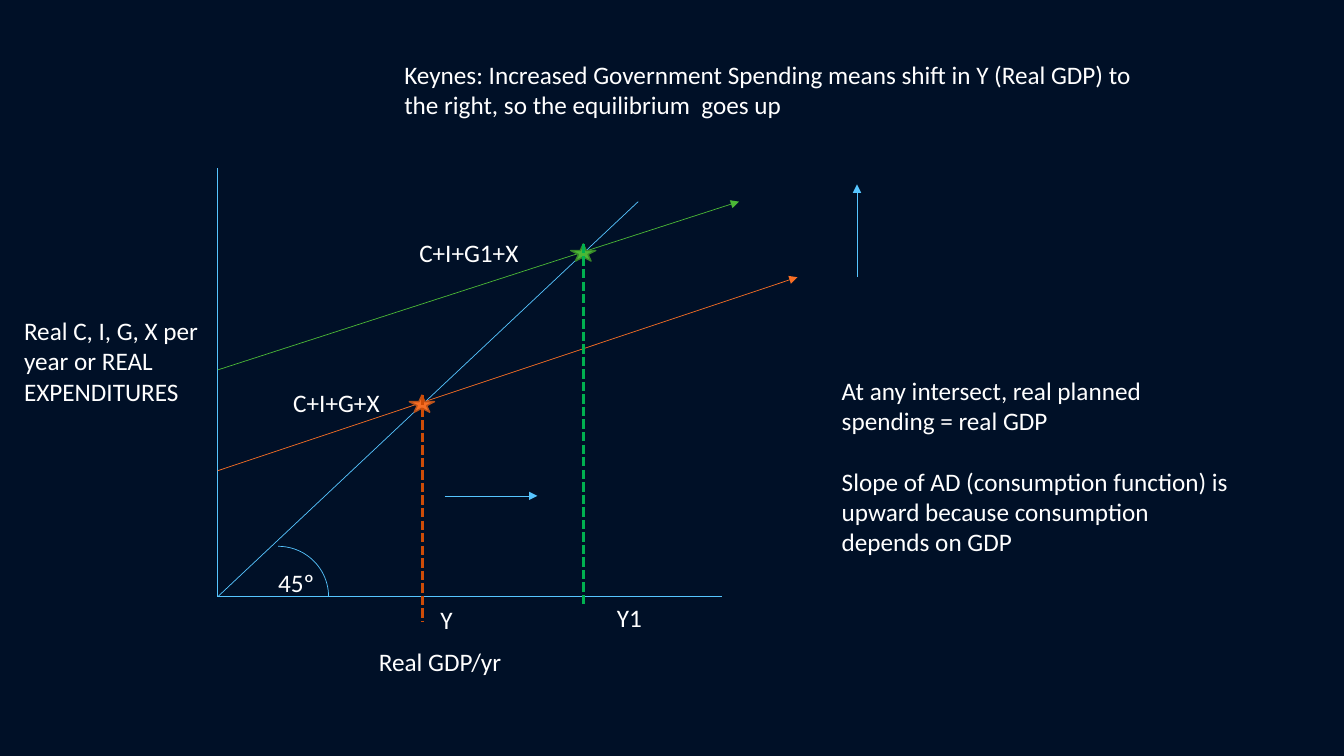
from dataclasses import dataclass

from lxml.etree import SubElement
from pptx import Presentation
from pptx.dml.color import RGBColor
from pptx.enum.dml import MSO_LINE
from pptx.enum.shapes import MSO_CONNECTOR, MSO_SHAPE
from pptx.enum.text import MSO_ANCHOR, MSO_AUTO_SIZE, PP_ALIGN
from pptx.oxml.ns import qn
from pptx.slide import Slide
from pptx.text.text import TextFrame
from pptx.util import Inches, Pt

COLORS = {
    "background": "001027",
    "text": "FFFFFF",
    "axis": "56C5FF",
    "before": "F86E24",
    "before_edge": "B7511B",
    "before_drop": "CE4C07",
    "after": "4BB836",
    "after_edge": "378828",
    "after_drop": "00B050",
}
FONT = "Calibri"
FONT_SIZE = 18
ORIGIN_X, ORIGIN_Y = 2.16, 5.92
STAR_WIDTH, STAR_HEIGHT = 0.25, 0.17


@dataclass
class Line:
    start: tuple[float, float]
    end: tuple[float, float]
    color: str = "axis"
    width: float = 0.5
    arrow: bool = False
    dashed: bool = False


@dataclass
class Star:
    left: float
    top: float
    color: str
    edge: str


@dataclass
class Label:
    left: float
    top: float
    width: float
    height: float
    paragraphs: tuple[str, ...]


CURVES = [
    Line((ORIGIN_X, 1.67), (ORIGIN_X, ORIGIN_Y)),
    Line((ORIGIN_X, ORIGIN_Y), (7.16, ORIGIN_Y)),
    Line((ORIGIN_X, ORIGIN_Y), (6.33, 2)),
    Line((ORIGIN_X, 4.67), (7.91, 2.75), "before", arrow=True),
    Line((ORIGIN_X, 3.67), (7.33, 2), "after", arrow=True),
]
EQUILIBRIA = [
    Star(5.66, 2.42, "after", "after_edge"),
    Star(4.06, 3.92, "before", "before_edge"),
]
DROPS_AND_SHIFTS = [
    Line((4.19, 3.92), (4.19, 6.17), "before_drop", 2.25, dashed=True),
    Line((5.79, 2.42), (5.79, 6), "after_drop", 2.25, dashed=True),
    Line((8.5, 2.75), (8.5, 1.83), arrow=True),
    Line((4.41, 4.92), (5.33, 4.92), arrow=True),
]
TITLE = Label(3.91, 0.54, 7.67, 0.71, (
    "Keynes: Increased Government Spending means shift in Y (Real GDP) "
    "to the right, so the equilibrium  goes up",
))
LABELS = [
    Label(2.66, 5.58, 0.83, 0.4, ("45º",)),
    Label(4.06, 2.31, 1.42, 0.4, ("C+I+G1+X",)),
    Label(2.81, 3.79, 1.25, 0.4, ("C+I+G+X",)),
    Label(4.27, 5.95, 0.35, 0.4, ("Y",)),
    Label(6.02, 5.93, 0.58, 0.4, ("Y1",)),
    Label(0.14, 3.08, 1.93, 1.01,
          ("Real C, I, G, X per year or REAL EXPENDITURES",)),
    Label(3.66, 6.36, 2.35, 0.4, ("Real GDP/yr",)),
    Label(8.25, 3.67, 4.08, 1.92, (
        "At any intersect, real planned spending = real GDP",
        "Slope of AD (consumption function) is upward because "
        "consumption depends on GDP",
    )),
]


def rgb(name: str) -> RGBColor:
    return RGBColor.from_string(COLORS[name])


def draw_line(slide: Slide, line: Line) -> None:
    points = [Inches(value) for value in (*line.start, *line.end)]
    connector = slide.shapes.add_connector(MSO_CONNECTOR.STRAIGHT, *points)
    connector.line.color.rgb = rgb(line.color)
    connector.line.width = Pt(line.width)
    if line.dashed:
        connector.line.dash_style = MSO_LINE.SQUARE_DOT
    properties = connector._element.spPr
    if line.arrow:
        SubElement(properties.find(qn("a:ln")), qn("a:tailEnd"), type="triangle")
    SubElement(properties, qn("a:effectLst"))


def draw_star(slide: Slide, star: Star) -> None:
    shape = slide.shapes.add_shape(
        MSO_SHAPE.STAR_5_POINT, Inches(star.left), Inches(star.top),
        Inches(STAR_WIDTH), Inches(STAR_HEIGHT))
    shape.shadow.inherit = False
    shape.fill.solid()
    shape.fill.fore_color.rgb = rgb(star.color)
    shape.line.color.rgb = rgb(star.edge)
    shape.line.width = Pt(1)


def draw_angle_arc(slide: Slide) -> None:
    arc = slide.shapes.add_shape(
        MSO_SHAPE.ARC, Inches(2.26), Inches(5.42), Inches(1), Inches(1))
    arc.shadow.inherit = False
    arc.fill.background()
    arc.line.color.rgb = rgb("axis")
    arc.line.width = Pt(0.5)


def write_text(text_frame: TextFrame, paragraphs: tuple[str, ...]) -> None:
    text_frame.text = "\n".join(paragraphs)
    text_frame.word_wrap = True
    text_frame.auto_size = MSO_AUTO_SIZE.SHAPE_TO_FIT_TEXT
    text_frame.vertical_anchor = MSO_ANCHOR.TOP
    for index, paragraph in enumerate(text_frame.paragraphs):
        paragraph.alignment = PP_ALIGN.LEFT
        if index:
            paragraph.space_before = Pt(22)
        paragraph.font.name = FONT
        paragraph.font.size = Pt(FONT_SIZE)
        paragraph.font.color.rgb = rgb("text")


def draw_title(slide: Slide) -> None:
    title = slide.shapes.title
    title.left, title.top = Inches(TITLE.left), Inches(TITLE.top)
    title.width, title.height = Inches(TITLE.width), Inches(TITLE.height)
    write_text(title.text_frame, TITLE.paragraphs)


def draw_label(slide: Slide, label: Label) -> None:
    box = slide.shapes.add_textbox(
        Inches(label.left), Inches(label.top),
        Inches(label.width), Inches(label.height))
    write_text(box.text_frame, label.paragraphs)


def main() -> None:
    presentation = Presentation()
    presentation.slide_width = Inches(13.33)
    presentation.slide_height = Inches(7.5)
    slide = presentation.slides.add_slide(presentation.slide_layouts[5])
    slide.background.fill.solid()
    slide.background.fill.fore_color.rgb = rgb("background")

    draw_title(slide)
    for line in CURVES:
        draw_line(slide, line)
    for star in EQUILIBRIA:
        draw_star(slide, star)
    for line in DROPS_AND_SHIFTS:
        draw_line(slide, line)
    draw_angle_arc(slide)
    for label in LABELS:
        draw_label(slide, label)

    presentation.save("out.pptx")


if __name__ == "__main__":
    main()
